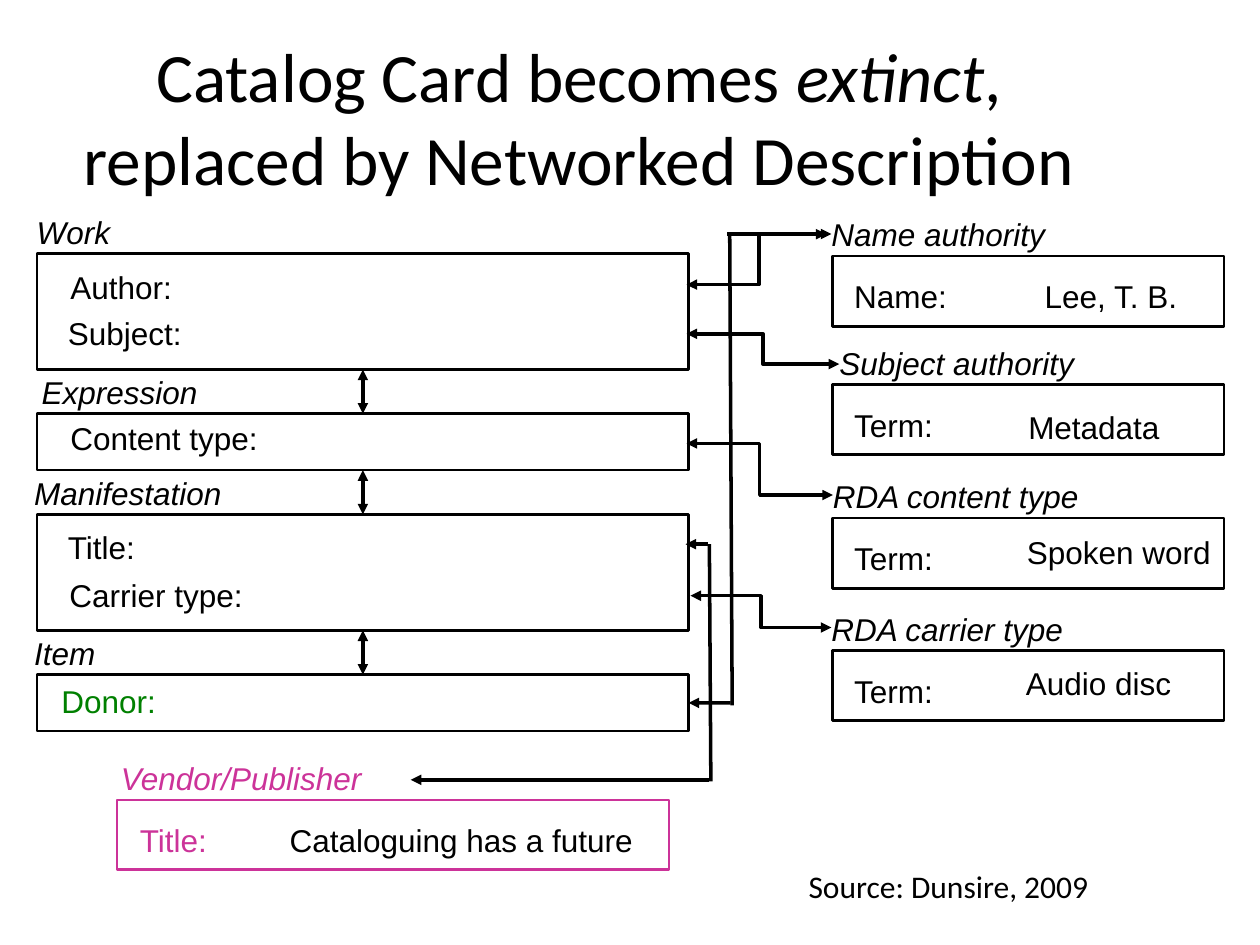
from lxml.etree import SubElement
from pptx import Presentation
from pptx.dml.color import RGBColor
from pptx.enum.shapes import MSO_CONNECTOR, MSO_SHAPE
from pptx.enum.text import MSO_ANCHOR, PP_ALIGN
from pptx.oxml.ns import qn
from pptx.util import Cm, Pt

INK = {"black": "000000", "green": "008000", "pink": "CC3399"}

deck = Presentation()
deck.slide_width, deck.slide_height = Cm(25.4), Cm(19.05)
slide = deck.slides.add_slide(deck.slide_layouts[6])
shapes = slide.shapes


def write(text, x, y, wide, ink="black", italic=False):
    """Add one line of 18 pt Arial without insets."""
    box = shapes.add_textbox(Cm(x), Cm(y), Cm(wide + 0.1), Cm(0.79))
    frame = box.text_frame
    frame.word_wrap = True
    frame.margin_left = frame.margin_right = 0
    frame.margin_top = frame.margin_bottom = 0
    line = frame.paragraphs[0]
    line.text = text
    line.font.name, line.font.size = "Arial", Pt(18)
    line.font.italic = italic
    line.font.color.rgb = RGBColor.from_string(INK[ink])


def link(x1, y1, x2, y2, ends="", kind=MSO_CONNECTOR.STRAIGHT):
    """Draw a connector; ends names its arrowheads, in the order head, tail."""
    wire = shapes.add_connector(kind, Cm(x1), Cm(y1), Cm(x2), Cm(y2))
    wire.line.width = Pt(2)
    wire.line.color.rgb = RGBColor.from_string(INK["black"])
    for end in ends.split():
        SubElement(wire.line._get_or_add_ln(), qn(f"a:{end}End"), type="triangle")
    SubElement(wire._element.spPr, qn("a:effectLst"))
    return wire


# Title
title = shapes.add_textbox(Cm(1.27), Cm(0.76), Cm(20.8), Cm(3.18))
frame = title.text_frame
frame.word_wrap = True
frame.vertical_anchor = MSO_ANCHOR.MIDDLE
head = frame.paragraphs[0]
head.alignment = PP_ALIGN.CENTER
head.font.name, head.font.size = "Calibri", Pt(39.6)
head.font.color.rgb = RGBColor.from_string(INK["black"])
for text, italic in [("Catalog Card becomes ", False), ("extinct", True),
                     (", replaced by Networked Description", False)]:
    run = head.add_run()
    run.text = text
    run.font.italic = italic

# Each record: label, label x, label width, box (x, y, width, height), colour,
# then fields as text, x, drop below the box top, width
LEFT, WIDE, GAP = 0.75, 13.13, 0.89
cards = []
top = 5.11
for label, x, wide, tall, fields in [
    ("Work", 0.74, 4.14, 2.34,
     [("Author:", 1.42, 0.3, 2.11), ("Subject:", 1.37, 1.22, 2.39)]),
    ("Expression", 0.84, 3.38, 1.14, [("Content type:", 1.42, 0.1, 3.91)]),
    ("Manifestation", 0.69, 4.14, 2.34,
     [("Title:", 1.37, 0.28, 1.37), ("Carrier type:", 1.4, 1.24, 3.61)]),
    ("Item", 0.69, 1.42, 1.14, [("Donor:", 1.24, 0.15, 1.96)]),
]:
    cards.append((label, x, wide, (LEFT, top, WIDE, tall), "black", fields))
    top += tall + GAP

for label, x, wide, y, key, value, at, drop, span in [
    ("Name authority", 16.76, 4.57, 5.16, "Name:", "Lee, T. B.", 21.06, 0.43, 2.72),
    ("Subject authority", 16.92, 5.05, 7.75, "Term:", "Metadata", 20.73, 0.48, 2.77),
    ("RDA content type", 16.79, 5.31, 10.44, "Term:", "Spoken word", 20.7, 0.3, 3.84),
    ("RDA carrier type", 16.76, 5, 13.11, "Term:", "Audio disc", 20.68, 0.28, 3.12),
]:
    fields = [(key, 17.22, 0.43, 1.93), (value, at, drop, span)]
    cards.append((label, x, wide, (16.78, y, 7.9, 1.42), "black", fields))

cards.append(("Vendor/Publisher", 2.44, 5.46, (2.36, 16.13, 11.13, 1.4), "pink",
              [("Title:", 2.82, 0.43, 1.37),
               ("Cataloguing has a future", 5.84, 0.43, 7.16)]))

tints = {"Donor:": "green"}
boxes = {}
for label, x, wide, place, ink, fields in cards:
    box = shapes.add_shape(MSO_SHAPE.RECTANGLE, *map(Cm, place))
    box.shadow.inherit = False
    box.fill.background()
    box.line.color.rgb = RGBColor.from_string(INK[ink])
    box.line.width = Pt(1.5)
    boxes[label] = box
    write(label, x, place[1] - 0.82, wide, ink, True)
    for text, at, drop, span in fields:
        tint = "black" if text.startswith("Cataloguing") else tints.get(text, ink)
        write(text, at, place[1] + drop, span, tint)

# Arrows between the stacked records
stack = [boxes[name] for name in ("Work", "Expression", "Manifestation", "Item")]
for upper, lower in zip(stack, stack[1:]):
    wire = link(0, 0, 1, 1, "head tail")
    wire.begin_connect(upper, 2)
    wire.end_connect(lower, 0)

# Elbows from fields to authorities
for ends in [(13.84, 5.74, 16.76, 4.72), (13.84, 6.73, 16.92, 7.34),
             (13.84, 8.94, 16.79, 9.98), (13.92, 12.01, 16.76, 12.65)]:
    link(*ends, "head tail", MSO_CONNECTOR.ELBOW)

# Donor to name authority
link(14.66, 4.72, 16.66, 4.72, "tail")
link(14.71, 4.7, 14.76, 14.22)
donor = link(13.82, 14.17, 14.73, 14.17, "head")
donor.begin_connect(boxes["Item"], 3)

# Title to publisher
link(13.82, 10.97, 14.27, 10.97, "head")
link(14.3, 10.97, 14.33, 15.75)
link(8.28, 15.72, 14.3, 15.72, "head")

# Source
credit = shapes.add_textbox(Cm(16.05), Cm(17.35), Cm(6.22), Cm(1.02))
credit.text_frame.word_wrap = False
line = credit.text_frame.paragraphs[0]
line.text = "Source: Dunsire, 2009"
line.font.name, line.font.size = "Calibri", Pt(18)
line.font.color.rgb = RGBColor.from_string(INK["black"])

deck.save("out.pptx")
